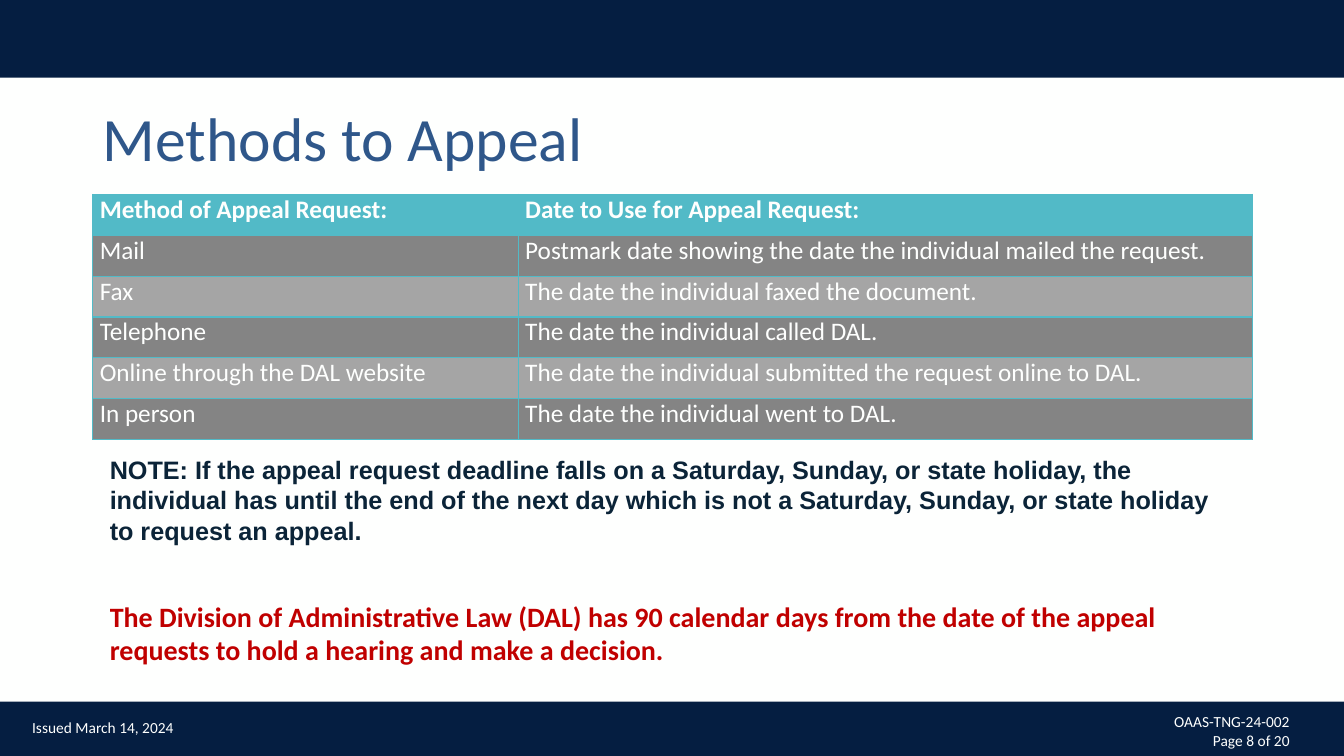
from lxml import etree
from pptx import Presentation
from pptx.dml.color import RGBColor
from pptx.enum.shapes import MSO_SHAPE
from pptx.enum.text import MSO_ANCHOR, PP_ALIGN
from pptx.oxml.ns import qn
from pptx.util import Inches, Pt

RECT = MSO_SHAPE.RECTANGLE
TOP, MIDDLE, BOTTOM = MSO_ANCHOR.TOP, MSO_ANCHOR.MIDDLE, MSO_ANCHOR.BOTTOM
LEFT, RIGHT = PP_ALIGN.LEFT, PP_ALIGN.RIGHT

WIDE, HIGH = 13.33, 7.5
WHITE, NAVY, TEAL = "FEFFFE", "051E41", "52BAC7"
BANDS = ("848484", "A5A5A5")

BARS = [(6.96, 0.54), (-0.03, 0.8)]
ROWS = [
    ("Method of Appeal Request:", "Date to Use for Appeal Request:"),
    ("Mail", "Postmark date showing the date the individual mailed the request."),
    ("Fax", "The date the individual faxed the document."),
    ("Telephone", "The date the individual called DAL."),
    ("Online through the DAL website",
     "The date the individual submitted the request online to DAL."),
    ("In person", "The date the individual went to DAL."),
]
GRID = (0.92, 1.93, 11.5, 2.43)
COLS = (4.22, 7.28)
TEXTS = [
    ("Methods to Appeal", (0.92, 0.8, 11.5, 1.2),
     "Calibri", 44, "2F578A", False, MIDDLE, LEFT, 0.9),
    ("The Division of Administrative Law (DAL) has 90 calendar days from the date "
     "of the appeal requests to hold a hearing and make a decision.",
     (0.99, 5.8, 10.69, 0.86), "Calibri", 20, "C00000", True, BOTTOM, LEFT, 1.0),
    ("NOTE: If the appeal request deadline falls on a Saturday, Sunday, or state "
     "holiday, the individual has until the end of the next day which is not a "
     "Saturday, Sunday, or state holiday to request an appeal.",
     (0.99, 4.46, 11.15, 1.01), "Arial", 18, "0B2438", True, TOP, LEFT, 1.0),
    ("Issued March 14, 2024", (0.22, 7.14, 1.82, 0.22),
     "Calibri", 11, WHITE, False, BOTTOM, LEFT, 1.0),
    ("OAAS-TNG-24-002\nPage 8 of 20", (11.29, 7.05, 1.6, 0.4),
     "Calibri", 11, WHITE, False, MIDDLE, RIGHT, 1.0),
]


def paint(fill, tone):
    fill.solid()
    fill.fore_color.rgb = RGBColor.from_string(tone)


def style(frame, face, size, tone, bold, align=LEFT, lead=1.0):
    for para in frame.paragraphs:
        para.alignment = align
        para.line_spacing = lead
        for run in para.runs:
            run.font.name = face
            run.font.size = Pt(size)
            run.font.bold = bold
            run.font.color.rgb = RGBColor.from_string(tone)


def edge(cell, tone):
    props = cell._tc.get_or_add_tcPr()
    for side in ("lnL", "lnR", "lnT", "lnB"):
        line = etree.SubElement(props, qn("a:" + side), w=str(Pt(1)))
        fill = etree.SubElement(line, qn("a:solidFill"))
        etree.SubElement(fill, qn("a:srgbClr"), val=tone)


def add_bar(slide, top, tall):
    bar = slide.shapes.add_shape(RECT, 0, Inches(top), Inches(WIDE), Inches(tall))
    bar.shadow.inherit = False
    paint(bar.fill, NAVY)
    bar.line.fill.background()


def add_text(slide, words, spot, face, size, tone, bold, anchor, align, lead):
    frame = slide.shapes.add_textbox(*map(Inches, spot)).text_frame
    frame.word_wrap = True
    frame.vertical_anchor = anchor
    frame.text = words
    style(frame, face, size, tone, bold, align, lead)


def add_grid(slide):
    table = slide.shapes.add_table(len(ROWS), len(COLS), *map(Inches, GRID)).table
    for col, wide in zip(table.columns, COLS):
        col.width = Inches(wide)
    for r, row in enumerate(ROWS):
        for c, words in enumerate(row):
            cell = table.cell(r, c)
            cell.margin_left = cell.margin_right = Inches(0.07)
            cell.margin_top = cell.margin_bottom = 0
            edge(cell, TEAL)
            paint(cell.fill, BANDS[(r - 1) % 2] if r else TEAL)
            cell.text_frame.text = words
            style(cell.text_frame, "Calibri", 18, WHITE, r == 0)


def main():
    deck = Presentation()
    deck.slide_width, deck.slide_height = Inches(WIDE), Inches(HIGH)
    slide = deck.slides.add_slide(deck.slide_layouts[6])
    paint(slide.background.fill, WHITE)
    for bar in BARS:
        add_bar(slide, *bar)
    add_grid(slide)
    for item in TEXTS:
        add_text(slide, *item)
    deck.save("out.pptx")


if __name__ == "__main__":
    main()
